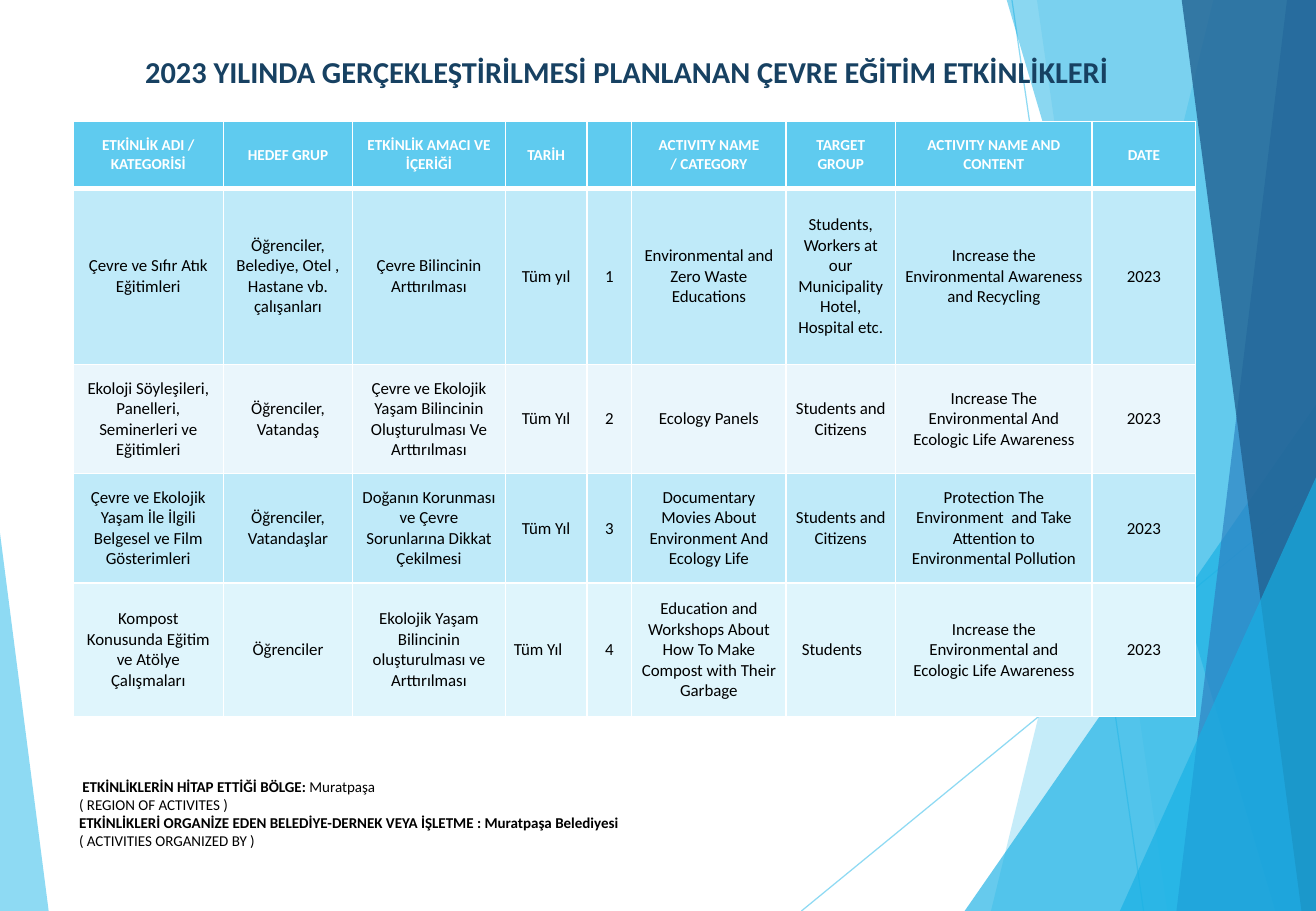
from lxml.etree import SubElement
from pptx import Presentation
from pptx.dml.color import RGBColor
from pptx.enum.shapes import MSO_CONNECTOR, MSO_SHAPE
from pptx.enum.text import MSO_ANCHOR, MSO_AUTO_SIZE, PP_ALIGN
from pptx.oxml.ns import qn
from pptx.util import Inches, Pt

WIDTH, HEIGHT = Inches(10.83), Inches(7.5)
COLORS = {
    "sky": "5FCBEF", "azure": "17B0E4", "blue": "2E83C3", "navy": "226292",
    "title": "174162", "white": "FFFFFF", "black": "000000",
    "band": "BFEAF9", "pale": "EAF6FC", "mist": "DFF5FC",
}
ROW_FILLS = ["sky", "band", "pale", "band", "mist"]
COLUMN_WIDTHS = [1.24, 1.06, 1.26, 0.67, 0.37, 1.27, 0.9, 1.62, 0.85]
ROW_HEIGHTS = [0.55, 1.45, 0.9, 0.9, 1.1]
CELL_FORMAT = {
    "vertical_anchor": MSO_ANCHOR.MIDDLE,
    "margin_left": Inches(0.07), "margin_right": Inches(0.07),
    "margin_top": Inches(0.04), "margin_bottom": Inches(0.04),
}
TITLE_FONT = {"name": "Calibri", "size": Pt(18), "bold": True}
HEADER_FONT = {"name": "Calibri", "size": Pt(9), "bold": True}
BODY_FONT = {"name": "Calibri", "size": Pt(10), "bold": False}
NOTE_FONT = {"name": "Calibri", "size": Pt(8.9)}

TITLE = "2023 YILINDA GERÇEKLEŞTİRİLMESİ PLANLANAN ÇEVRE EĞİTİM ETKİNLİKLERİ"
ACTIVITIES = [
    ["ETKİNLİK ADI / KATEGORİSİ", "HEDEF GRUP", "ETKİNLİK AMACI VE İÇERİĞİ", "TARİH", "",
     "ACTIVITY NAME\n/ CATEGORY", "TARGET GROUP", "ACTIVITY NAME AND CONTENT", "DATE"],
    ["Çevre ve Sıfır Atık Eğitimleri",
     "Öğrenciler, Belediye, Otel , Hastane vb. çalışanları",
     "Çevre Bilincinin Arttırılması", "Tüm yıl", "1",
     "Environmental and Zero Waste\nEducations",
     "Students, Workers at our Municipality Hotel, Hospital etc.",
     "Increase the Environmental Awareness and Recycling", "2023"],
    ["Ekoloji Söyleşileri, Panelleri, Seminerleri ve Eğitimleri",
     "Öğrenciler, Vatandaş",
     "Çevre ve Ekolojik Yaşam Bilincinin Oluşturulması Ve Arttırılması", "Tüm Yıl", "2",
     "Ecology Panels", "Students and Citizens",
     "Increase The Environmental And Ecologic Life Awareness", "2023"],
    ["Çevre ve Ekolojik Yaşam İle İlgili Belgesel ve Film Gösterimleri",
     "Öğrenciler, Vatandaşlar",
     "Doğanın Korunması ve Çevre Sorunlarına Dikkat Çekilmesi", "Tüm Yıl", "3",
     "Documentary Movies About Environment And Ecology Life", "Students and Citizens",
     "Protection The Environment  and Take Attention to Environmental Pollution", "2023"],
    ["Kompost Konusunda Eğitim ve Atölye Çalışmaları", "Öğrenciler",
     "Ekolojik Yaşam Bilincinin oluşturulması ve Arttırılması", "Tüm Yıl", "4",
     "Education and Workshops About How To Make Compost with Their Garbage", "Students",
     "Increase the Environmental and Ecologic Life Awareness", "2023"],
]
LEFT_ALIGNED = {(4, 3): Inches(0.07), (4, 6): Inches(0.13)}
NOTES = [
    [(" ETKİNLİKLERİN HİTAP ETTİĞİ BÖLGE: ", True), ("Muratpaşa", False)],
    [("( REGION OF ACTIVITES )", False)],
    [("ETKİNLİKLERİ ORGANİZE EDEN BELEDİYE-DERNEK VEYA İŞLETME : Muratpaşa Belediyesi", True)],
    [("( ACTIVITIES ORGANIZED BY )", False)],
]


def across(percent):
    return round(WIDTH * percent / 100)


def down(percent):
    return round(HEIGHT * percent / 100)


def rgb(color):
    return RGBColor.from_string(COLORS[color])


def apply_format(target, values):
    for name, value in values.items():
        setattr(target, name, value)


def style_font(font, values, color):
    apply_format(font, values)
    font.color.rgb = rgb(color)


def set_opacity(shape, percent):
    for color in shape.element.spPr.iter(qn("a:srgbClr")):
        SubElement(color, qn("a:alpha"), val=str(percent * 1000))


def paint(facet, color, opacity):
    facet.shadow.inherit = False
    facet.fill.solid()
    facet.fill.fore_color.rgb = rgb(color)
    facet.line.fill.background()
    set_opacity(facet, opacity)


def add_ray(slide, start, end):
    ray = slide.shapes.add_connector(
        MSO_CONNECTOR.STRAIGHT, across(start[0]), down(start[1]), across(end[0]), down(end[1]))
    ray.line.color.rgb = rgb("sky")
    ray.line.width = Pt(0.75)
    set_opacity(ray, 70)
    SubElement(ray.element.spPr, qn("a:effectLst"))


def add_facet(slide, top, bottom, color, opacity):
    outline = slide.shapes.build_freeform(across(top), 0)
    outline.add_line_segments([(WIDTH, 0), (WIDTH, HEIGHT), (across(bottom), HEIGHT)])
    paint(outline.convert_to_shape(), color, opacity)


def add_wedge(slide, left, top, width, apex, color, opacity):
    wedge = slide.shapes.add_shape(
        MSO_SHAPE.ISOSCELES_TRIANGLE, across(left), down(top), across(width), down(100 - top))
    wedge.adjustments[0] = apex
    paint(wedge, color, opacity)


def add_backdrop(slide):
    add_ray(slide, (76.9, 0), (86.9, 100))
    add_ray(slide, (100, 53.7), (60.9, 100))
    add_facet(slide, 92.2, 75.3, "sky", 36)
    add_facet(slide, 78.8, 88.7, "sky", 20)
    add_wedge(slide, 73.3, 44.4, 26.7, 1, "azure", 66)
    add_facet(slide, 76.5, 96.9, "azure", 50)
    add_facet(slide, 97.8, 89.4, "blue", 70)
    add_facet(slide, 89.8, 98.9, "navy", 80)
    add_wedge(slide, 85.1, 52.4, 14.9, 1, "azure", 66)
    add_wedge(slide, 0, 58.5, 3.7, 0, "sky", 70)


def add_title(slide):
    title = slide.shapes.title
    title.element.getparent().append(title.element)
    apply_format(title, {"left": across(5.4), "top": down(4.6),
                         "width": across(84.5), "height": down(6.4)})
    frame = title.text_frame
    frame.text = TITLE
    apply_format(frame, {"word_wrap": True, "auto_size": MSO_AUTO_SIZE.NONE,
                         "vertical_anchor": MSO_ANCHOR.MIDDLE})
    heading = frame.paragraphs[0]
    heading.alignment = PP_ALIGN.CENTER
    style_font(heading.runs[0].font, TITLE_FONT, "title")


def add_borders(cell, widths):
    properties = cell._tc.get_or_add_tcPr()
    for position, (side, width) in enumerate(widths.items()):
        border = SubElement(properties, qn(f"a:ln{side}"), w=str(Pt(width)))
        SubElement(SubElement(border, qn("a:solidFill")), qn("a:srgbClr"), val=COLORS["white"])
        properties.insert(position, border)


def fill_cell(cell, text, row, column):
    apply_format(cell, CELL_FORMAT)
    cell.fill.solid()
    cell.fill.fore_color.rgb = rgb(ROW_FILLS[row])
    add_borders(cell, {"L": 1, "R": 1, "T": 3 if row == 1 else 1, "B": 3 if row == 0 else 1})
    cell.text_frame.text = text
    font, color = (BODY_FONT, "black") if row else (HEADER_FONT, "white")
    alignment = PP_ALIGN.CENTER
    if (row, column) in LEFT_ALIGNED:
        alignment = PP_ALIGN.LEFT
        cell.margin_left = LEFT_ALIGNED[row, column]
    for paragraph in cell.text_frame.paragraphs:
        paragraph.alignment = alignment
        style_font(paragraph.font, font, color)
        for run in paragraph.runs:
            style_font(run.font, font, color)


def add_activities(slide):
    activities = slide.shapes.add_table(
        len(ROW_HEIGHTS), len(COLUMN_WIDTHS), Inches(0.6), Inches(1),
        Inches(sum(COLUMN_WIDTHS)), Inches(sum(ROW_HEIGHTS))).table
    activities.horz_banding = False
    for column, width in zip(activities.columns, COLUMN_WIDTHS):
        column.width = Inches(width)
    for row, height in zip(activities.rows, ROW_HEIGHTS):
        row.height = Inches(height)
    for row, texts in enumerate(ACTIVITIES):
        for column, text in enumerate(texts):
            fill_cell(activities.cell(row, column), text, row, column)


def add_notes(slide):
    frame = slide.shapes.add_textbox(across(5.1), down(84.7), across(86.7), down(9.3)).text_frame
    frame.word_wrap = True
    for index, pieces in enumerate(NOTES):
        line = frame.add_paragraph() if index else frame.paragraphs[0]
        for text, bold in pieces:
            run = line.add_run()
            run.text = text
            style_font(run.font, NOTE_FONT | {"bold": bold}, "black")


def main():
    deck = Presentation()
    apply_format(deck, {"slide_width": WIDTH, "slide_height": HEIGHT})
    slide = deck.slides.add_slide(deck.slide_layouts.get_by_name("Title Only"))
    add_backdrop(slide)
    add_title(slide)
    add_notes(slide)
    add_activities(slide)
    deck.save("out.pptx")


if __name__ == "__main__":
    main()
